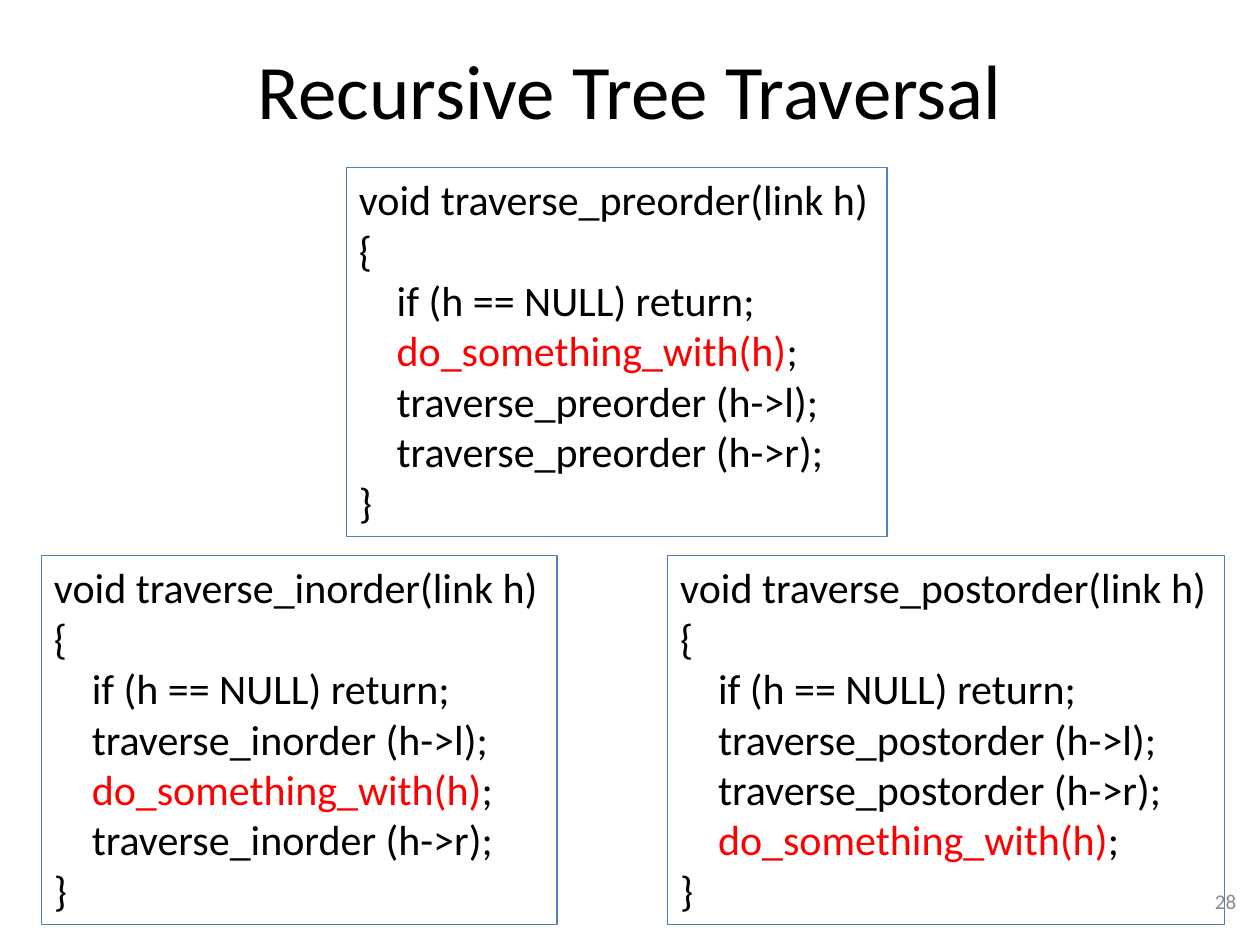
from pptx import Presentation
from pptx.dml.color import RGBColor
from pptx.enum.shapes import MSO_SHAPE as Shape
from pptx.enum.text import MSO_ANCHOR as Anchor, MSO_AUTO_SIZE as AutoSize, PP_ALIGN as Align
from pptx.util import Inches, Pt

COLORS = {"text": "000000", "visit": "FF0000", "border": "4F81BD", "number": "8C8C8C"}
FONT = "Calibri"
VISIT = "do_something_with(h)"
BOX_HEIGHT = 2.93
TOP_ROW, BOTTOM_ROW = 1.33, 4.41
INDENT = Inches(0.3)


def set_font(font, size, color):
    font.name = FONT
    font.size = Pt(size)
    font.color.rgb = RGBColor.from_string(COLORS[color])


presentation = Presentation()
presentation.slide_width = Inches(10)
presentation.slide_height = Inches(7.5)
slide = presentation.slides.add_slide(presentation.slide_layouts[5])

title = slide.shapes.title
title.left, title.top, title.width, title.height = map(Inches, (0.5, 0.08, 9, 1.25))
title.text_frame.text = "Recursive Tree Traversal"
title.text_frame.vertical_anchor = Anchor.MIDDLE
title_paragraph = title.text_frame.paragraphs[0]
title_paragraph.alignment = Align.CENTER
set_font(title_paragraph.font, 44, "text")

traversals = [
    ("inorder", 1, 0.33, BOTTOM_ROW, 4.09),
    ("preorder", 0, 2.75, TOP_ROW, 4.29),
    ("postorder", 2, 5.3, BOTTOM_ROW, 4.42),
]

for order, visit_position, left, top, width in traversals:
    function = f"traverse_{order}"
    steps = [f"{function} (h->l);", f"{function} (h->r);"]
    steps.insert(visit_position, f"{VISIT};")
    body = ["if (h == NULL) return;", *steps]
    lines = [f"void {function}(link h)", "{", *body, "}"]

    box = slide.shapes.add_shape(Shape.RECTANGLE, *map(Inches, (left, top, width, BOX_HEIGHT)))
    box.shadow.inherit = False
    box.fill.background()
    box.line.color.rgb = RGBColor.from_string(COLORS["border"])
    box.line.width = Pt(0.75)
    frame = box.text_frame
    frame.word_wrap = False
    frame.auto_size = AutoSize.SHAPE_TO_FIT_TEXT
    frame.vertical_anchor = Anchor.TOP

    for index, line in enumerate(lines):
        paragraph = frame.paragraphs[0] if index == 0 else frame.add_paragraph()
        paragraph.alignment = Align.LEFT
        if line in body:
            paragraph._p.get_or_add_pPr().set("marL", str(INDENT))
        pieces = [(VISIT, "visit"), (";", "text")] if line.startswith(VISIT) else [(line, "text")]
        for text, color in pieces:
            run = paragraph.add_run()
            run.text = text
            set_font(run.font, 24, color)

number = slide.shapes.add_textbox(*map(Inches, (7.58, 6.95, 2.33, 0.4)))
number.text_frame.word_wrap = True
number.text_frame.vertical_anchor = Anchor.MIDDLE
number_paragraph = number.text_frame.paragraphs[0]
number_paragraph.text = "28"
number_paragraph.alignment = Align.RIGHT
set_font(number_paragraph.font, 12, "number")

presentation.save("out.pptx")
